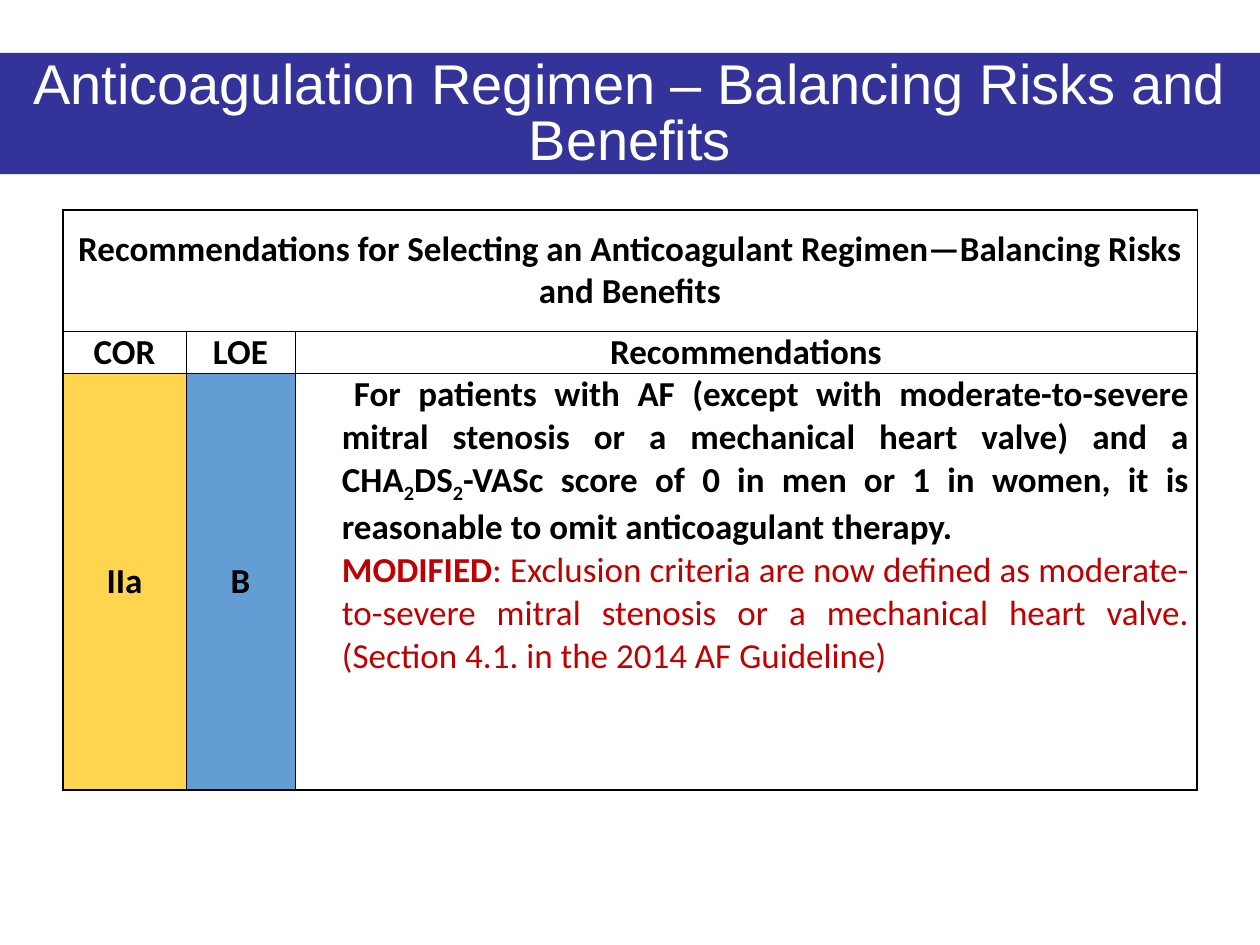
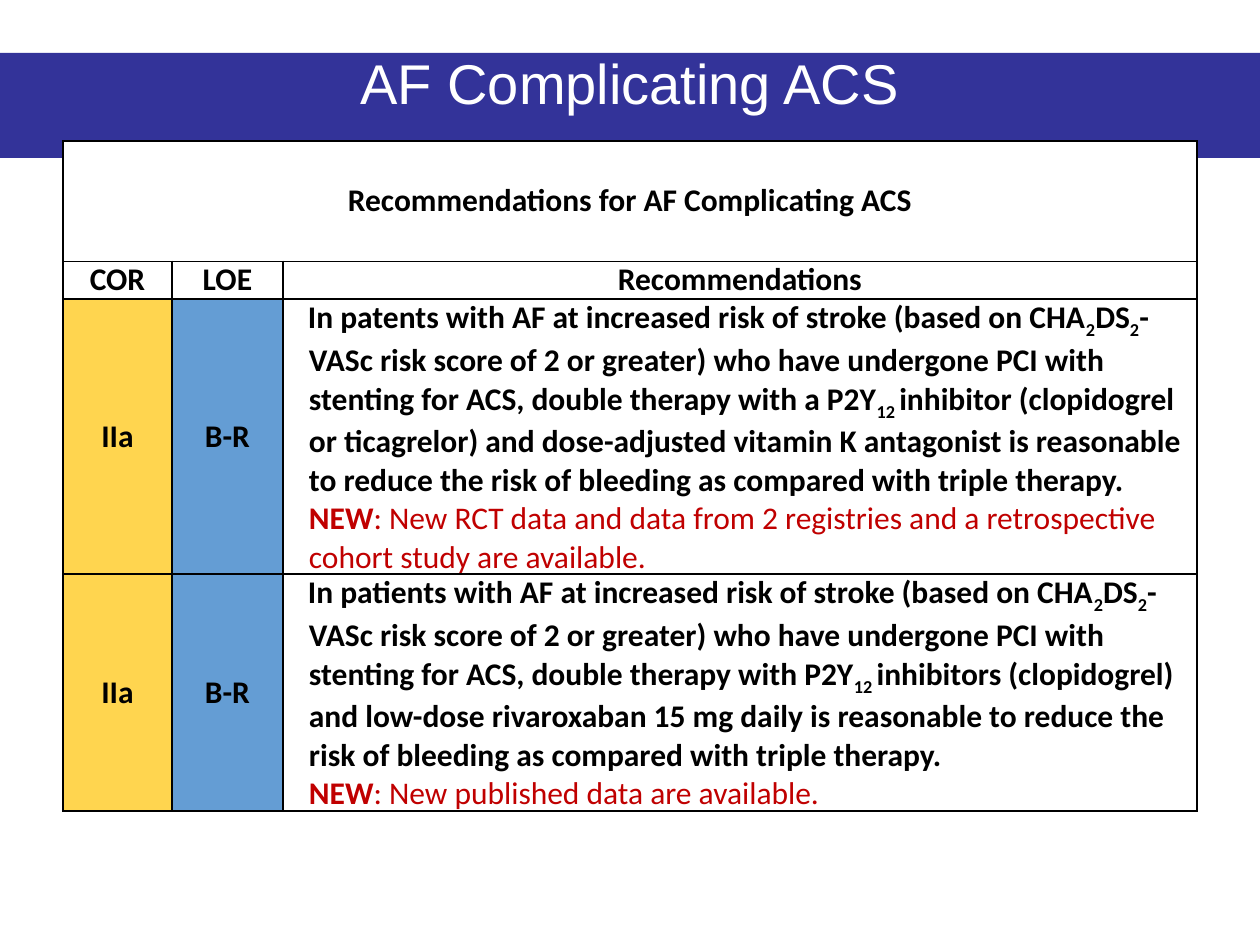
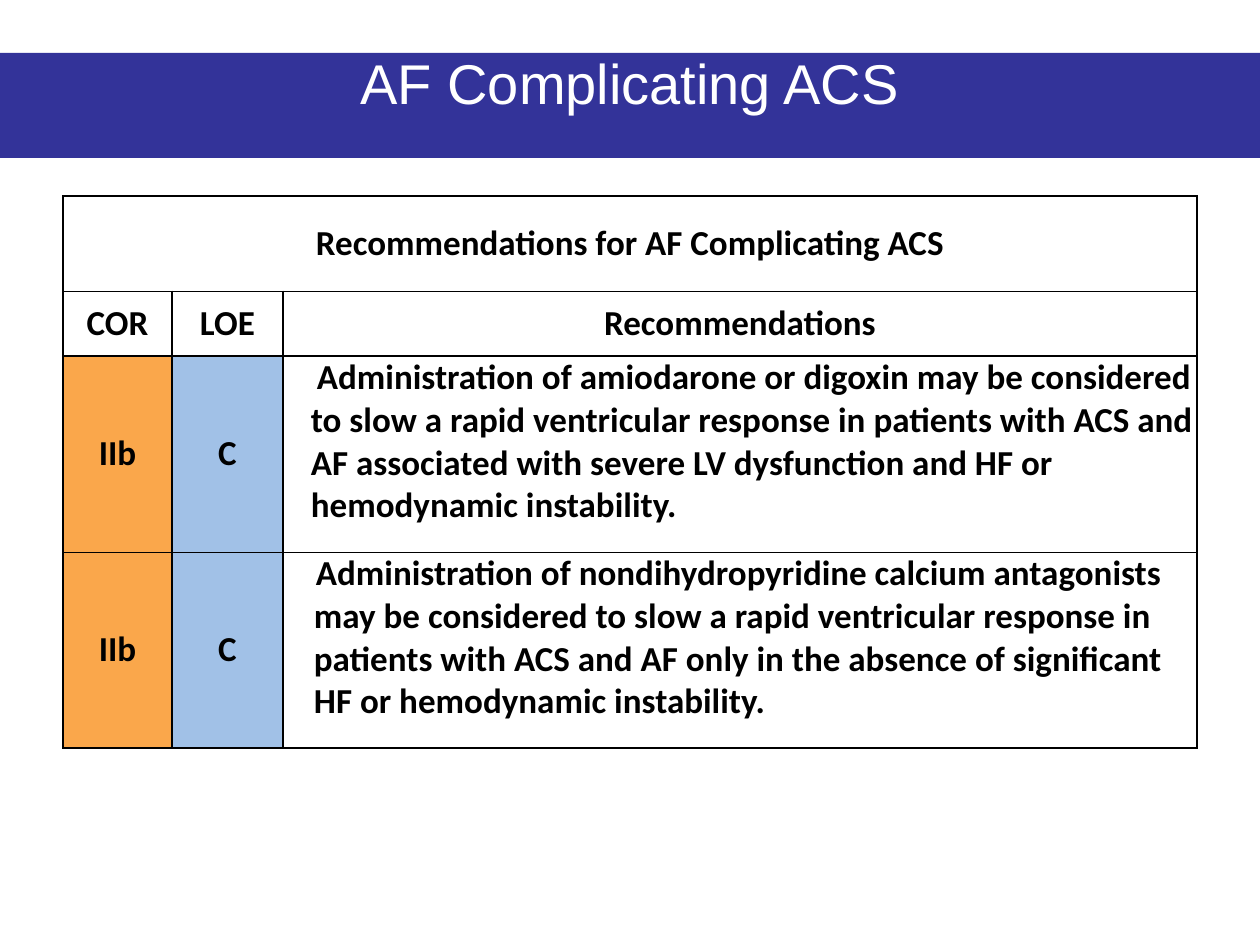
from dataclasses import dataclass

from lxml import etree
from pptx import Presentation
from pptx import util as u
from pptx.dml.color import RGBColor
from pptx.enum import text
from pptx.oxml import ns

# Shared look
EMU_PER_PX = 914400 / 126
SLIDE_WIDTH, SLIDE_HEIGHT = 1260, 945
TITLE_TOP = 53
TABLE_LEFT = 63
COLORS = {
    "band": "333399",
    "white": "FFFFFF",
    "black": "000000",
    "note": "C00000",
    "IIa": "FFD54F",
    "IIb": "FAA74B",
    "B": "649DD4",
    "B-R": "649DD4",
    "C": "A1C1E7",
}
HEADINGS = ("COR", "LOE", "Recommendations")
THICK, THIN = 1, 0.5


@dataclass(frozen=True)
class Recommendation:
    """One table row; underscores in advice enclose subscripts."""
    cor: str
    loe: str
    advice: str
    margin: int
    first_indent: int
    label: str = ""
    note: str = ""


@dataclass(frozen=True)
class RecommendationSlide:
    title: str
    title_height: int
    heading: str
    top: int
    columns: tuple[int, ...]
    rows: tuple[int, ...]
    font_size: int
    recommendations: tuple[Recommendation, ...]
    thin_rows: tuple[int, ...]
    thin_columns: bool = False
    justified: bool = False
    side_inset: int = 1
    right_inset: int = 1


# Content
ACS_COLUMNS = (109, 111, 914)
SLIDES = (
    RecommendationSlide(
        "Anticoagulation Regimen – Balancing Risks and Benefits", 121,
        "Recommendations for Selecting an Anticoagulant Regimen—Balancing Risks and Benefits",
        210, (123, 109, 902), (121, 42, 417), 20,
        (Recommendation(
            "IIa", "B",
            "For patients with AF (except with moderate-to-severe mitral stenosis or a "
            "mechanical heart valve) and a CHA_2_DS_2_-VASc score of 0 in men or 1 in women, "
            "it is reasonable to omit anticoagulant therapy.",
            45, 12, "MODIFIED",
            ": Exclusion criteria are now defined as moderate-to-severe mitral stenosis or a "
            "mechanical heart valve. (Section 4.1. in the 2014 AF Guideline)"),),
        thin_rows=(1, 2), thin_columns=True, justified=True, side_inset=2, right_inset=8),
    RecommendationSlide(
        "AF Complicating ACS", 67, "Recommendations for AF Complicating ACS",
        141, ACS_COLUMNS, (120, 38, 275, 237), 18,
        (Recommendation(
            "IIa", "B-R",
            "In patents with AF at increased risk of stroke (based on CHA_2_DS_2_-VASc risk "
            "score of 2 or greater) who have undergone PCI with stenting for ACS, double "
            "therapy with a P2Y_12 _inhibitor (clopidogrel or ticagrelor) and dose-adjusted "
            "vitamin K antagonist is reasonable to reduce the risk of bleeding as compared "
            "with triple therapy.",
            25, -1, "NEW",
            ": New RCT data and data from 2 registries and a retrospective cohort study "
            "are available."),
         Recommendation(
            "IIa", "B-R",
            "In patients with AF at increased risk of stroke (based on CHA_2_DS_2_-VASc risk "
            "score of 2 or greater) who have undergone PCI with stenting for ACS, double "
            "therapy with P2Y_12 _inhibitors (clopidogrel) and low-dose rivaroxaban 15 mg "
            "daily is reasonable to reduce the risk of bleeding as compared with triple "
            "therapy.",
            25, -1, "NEW", ": New published data are available.")),
        thin_rows=(1,)),
    RecommendationSlide(
        "AF Complicating ACS", 67, "Recommendations for AF Complicating ACS",
        196, ACS_COLUMNS, (95, 65, 196, 196), 20,
        (Recommendation(
            "IIb", "C",
            "Administration of amiodarone or digoxin may be considered to slow a rapid "
            "ventricular response in patients with ACS and AF associated with severe LV "
            "dysfunction and HF or hemodynamic instability.",
            27, 6),
         Recommendation(
            "IIb", "C",
            "Administration of nondihydropyridine calcium antagonists may be considered to "
            "slow a rapid ventricular response in patients with ACS and AF only in the "
            "absence of significant HF or hemodynamic instability.",
            30, 2)),
        thin_rows=(1, 3)),
)


def px(length: int) -> u.Emu:
    return u.Emu(round(length * EMU_PER_PX))


def rgb(name: str) -> RGBColor:
    return RGBColor.from_string(COLORS[name])


def format_font(font, size: int, color: str, name: str, bold: bool) -> None:
    font.size, font.name, font.bold = u.Pt(size), name, bold
    font.color.rgb = rgb(color)


# Title band
def add_title(slide, content: RecommendationSlide) -> None:
    title = slide.shapes.title
    title.left, title.top = px(0), px(TITLE_TOP)
    title.width, title.height = px(SLIDE_WIDTH), px(content.title_height)
    title.fill.solid()
    title.fill.fore_color.rgb = rgb("band")
    frame = title.text_frame
    frame.text = content.title
    frame.word_wrap = True
    frame.auto_size = text.MSO_AUTO_SIZE.SHAPE_TO_FIT_TEXT
    frame.vertical_anchor = text.MSO_ANCHOR.TOP
    paragraph = frame.paragraphs[0]
    paragraph.alignment = text.PP_ALIGN.CENTER
    paragraph.line_spacing = 0.84
    format_font(paragraph.runs[0].font, 32, "white", "Arial", False)


# Table cells
def add_borders(cell, widths: dict[str, float]) -> None:
    properties = cell._tc.get_or_add_tcPr()
    for side, width in widths.items():
        line = etree.SubElement(properties, ns.qn(f"a:ln{side}"), w=str(u.Pt(width)))
        fill = etree.SubElement(line, ns.qn("a:solidFill"))
        etree.SubElement(fill, ns.qn("a:srgbClr"), val=COLORS["black"])


def format_cell(cell, fill: str, left: int, right: int) -> None:
    cell.fill.solid()
    cell.fill.fore_color.rgb = rgb(fill)
    cell.margin_left, cell.margin_right = px(left), px(right)
    cell.margin_top = cell.margin_bottom = 0


def write_label(cell, label: str, content: RecommendationSlide) -> None:
    format_cell(cell, COLORS.get(label) and label or "white",
                content.side_inset, content.side_inset)
    cell.vertical_anchor = text.MSO_ANCHOR.MIDDLE
    cell.text_frame.text = label
    paragraph = cell.text_frame.paragraphs[0]
    paragraph.alignment = text.PP_ALIGN.CENTER
    format_font(paragraph.runs[0].font, content.font_size, "black", "Calibri", True)


def format_paragraph(paragraph, margin: int, indent: int, justified: bool) -> None:
    paragraph.alignment = text.PP_ALIGN.JUSTIFY if justified else text.PP_ALIGN.LEFT
    properties = paragraph._p.get_or_add_pPr()
    properties.set("marL", str(px(margin)))
    properties.set("indent", str(px(indent)))


def write_recommendation(cell, item: Recommendation, content: RecommendationSlide) -> None:
    format_cell(cell, "white", content.side_inset, content.right_inset)
    cell.vertical_anchor = text.MSO_ANCHOR.TOP
    advice = cell.text_frame.paragraphs[0]
    format_paragraph(advice, item.margin, item.first_indent, content.justified)
    for index, part in enumerate(item.advice.split("_")):
        run = advice.add_run()
        run.text = part
        format_font(run.font, content.font_size, "black", "Calibri", True)
        if index % 2:
            run._r.get_or_add_rPr().set("baseline", "-25000")
    if item.note:
        note = cell.text_frame.add_paragraph()
        format_paragraph(note, item.margin, 0, content.justified)
        for part, bold in ((item.label, True), (item.note, False)):
            run = note.add_run()
            run.text = part
            format_font(run.font, content.font_size, "note", "Calibri", bold)


# Recommendation table
def add_recommendation_table(slide, content: RecommendationSlide) -> None:
    row_count, column_count = len(content.rows), len(content.columns)
    table = slide.shapes.add_table(
        row_count, column_count, px(TABLE_LEFT), px(content.top),
        px(sum(content.columns)), px(sum(content.rows))).table
    table.first_row = table.horz_banding = False
    for column, width in zip(table.columns, content.columns):
        column.width = px(width)
    for row, height in zip(table.rows, content.rows):
        row.height = px(height)

    def row_line(index: int) -> float:
        return THIN if index in content.thin_rows else THICK

    def column_line(index: int) -> float:
        return THIN if content.thin_columns and 0 < index < column_count else THICK

    for row in range(row_count):
        for column in range(column_count):
            add_borders(table.cell(row, column), {
                "L": column_line(column), "R": column_line(column + 1),
                "T": row_line(row), "B": row_line(row + 1)})

    table.cell(0, 0).merge(table.cell(0, column_count - 1))
    write_label(table.cell(0, 0), content.heading, content)
    for column, heading in enumerate(HEADINGS):
        write_label(table.cell(1, column), heading, content)
    for row, item in enumerate(content.recommendations, start=2):
        write_label(table.cell(row, 0), item.cor, content)
        write_label(table.cell(row, 1), item.loe, content)
        write_recommendation(table.cell(row, 2), item, content)


def main() -> None:
    presentation = Presentation()
    presentation.slide_width = px(SLIDE_WIDTH)
    presentation.slide_height = px(SLIDE_HEIGHT)
    title_only = presentation.slide_layouts.get_by_name("Title Only")
    for content in SLIDES:
        slide = presentation.slides.add_slide(title_only)
        add_title(slide, content)
        add_recommendation_table(slide, content)
    presentation.save("out.pptx")


if __name__ == "__main__":
    main()
